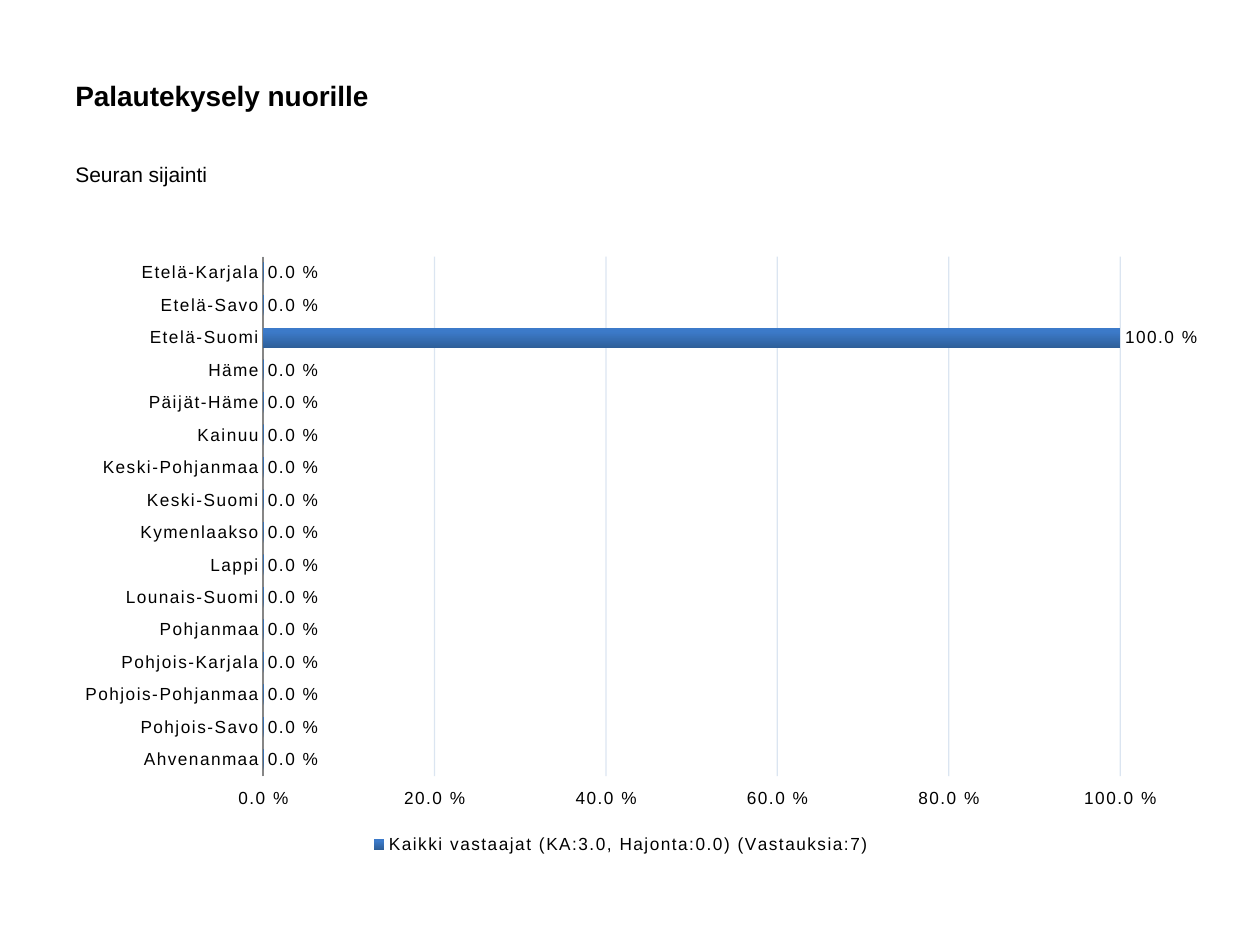
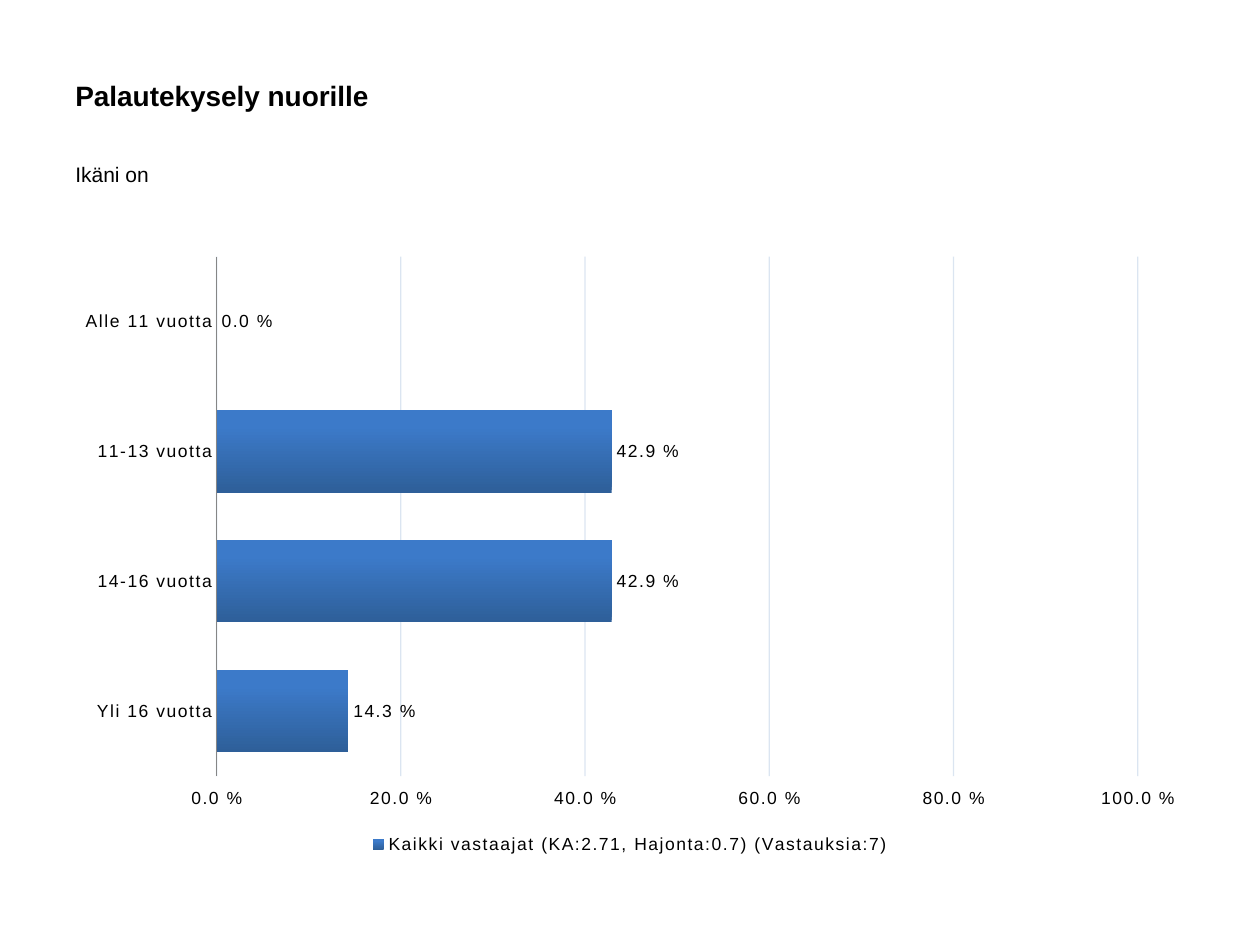
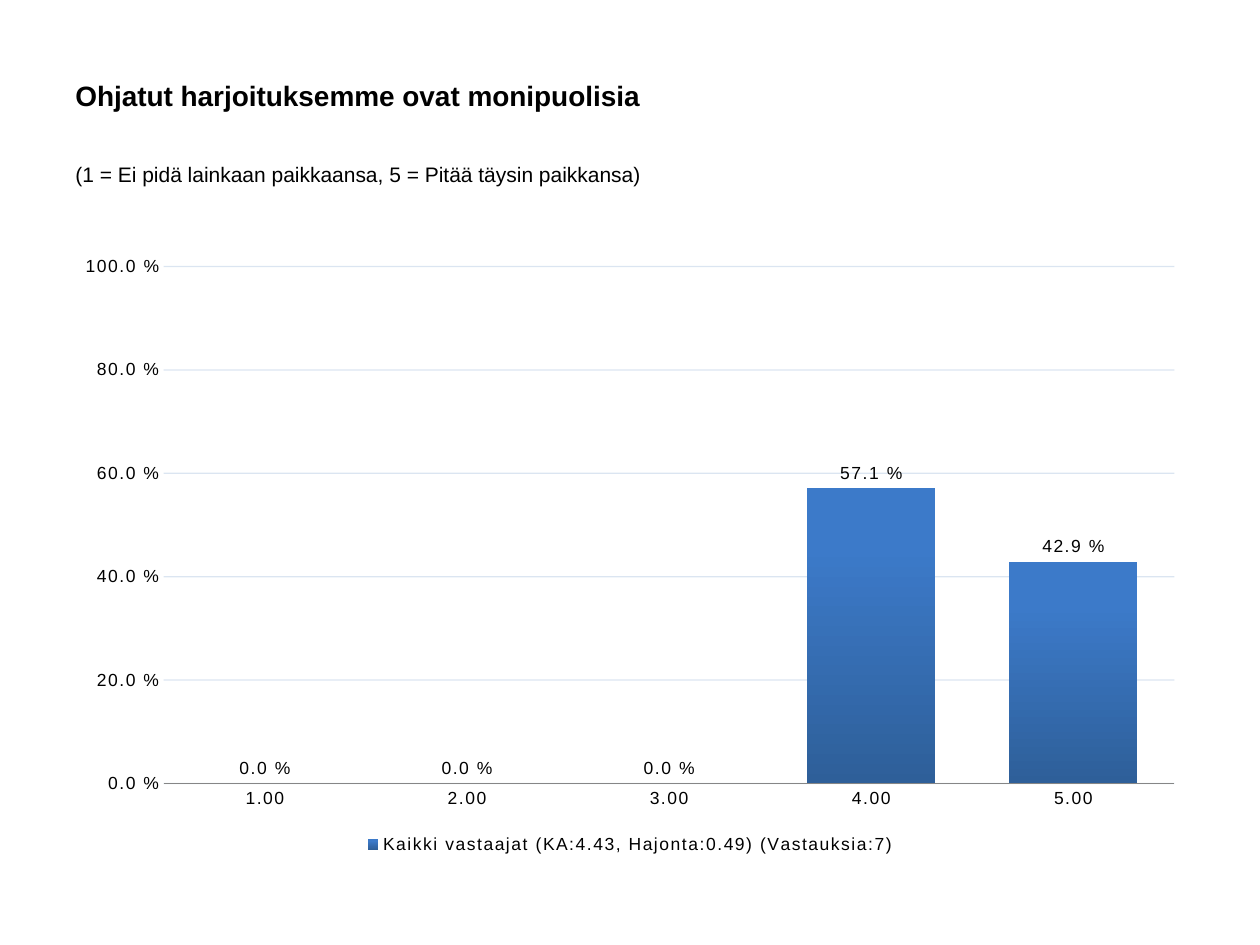
from pptx import Presentation
from pptx.chart.data import CategoryChartData
from pptx.dml.color import RGBColor
from pptx.enum.chart import (XL_CHART_TYPE, XL_LABEL_POSITION, XL_LEGEND_POSITION,
                             XL_TICK_LABEL_POSITION, XL_TICK_MARK)
from pptx.enum.text import MSO_ANCHOR
from pptx.oxml.ns import qn
from pptx.util import Inches, Pt
from lxml import etree

BAR = XL_CHART_TYPE.BAR_CLUSTERED
COLUMN = XL_CHART_TYPE.COLUMN_CLUSTERED
NO_TICK = XL_TICK_MARK.NONE
FAR_SIDE = XL_TICK_LABEL_POSITION.HIGH
OUTSIDE_END = XL_LABEL_POSITION.OUTSIDE_END
BOTTOM = XL_LEGEND_POSITION.BOTTOM
TOP_ANCHOR, MIDDLE_ANCHOR = MSO_ANCHOR.TOP, MSO_ANCHOR.MIDDLE

# Content
SURVEY = "Palautekysely nuorille"
REGIONS = [
    "Etelä-Karjala", "Etelä-Savo", "Etelä-Suomi", "Häme", "Päijät-Häme", "Kainuu",
    "Keski-Pohjanmaa", "Keski-Suomi", "Kymenlaakso", "Lappi", "Lounais-Suomi",
    "Pohjanmaa", "Pohjois-Karjala", "Pohjois-Pohjanmaa", "Pohjois-Savo", "Ahvenanmaa",
]
QUESTIONS = [
    {"title": SURVEY, "subtitle": "Seuran sijainti", "type": BAR,
     "series": "Kaikki vastaajat (KA:3.0, Hajonta:0.0) (Vastauksia:7)",
     "answers": {region: int(region == "Etelä-Suomi") for region in REGIONS}},
    {"title": SURVEY, "subtitle": "Ikäni on", "type": BAR,
     "series": "Kaikki vastaajat (KA:2.71, Hajonta:0.7) (Vastauksia:7)",
     "answers": {"Alle 11 vuotta": 0, "11-13 vuotta": 0.429,
                 "14-16 vuotta": 0.429, "Yli 16 vuotta": 0.143}},
    {"title": "Ohjatut harjoituksemme ovat monipuolisia",
     "subtitle": "(1 = Ei pidä lainkaan paikkaansa, 5 = Pitää täysin paikkansa)",
     "type": COLUMN,
     "series": "Kaikki vastaajat (KA:4.43, Hajonta:0.49) (Vastauksia:7)",
     "answers": {"1.00": 0, "2.00": 0, "3.00": 0, "4.00": 0.571, "5.00": 0.429}},
]

# Shared style
COLORS = {"text": "000000", "grid": "4F81BD", "axis": "868686",
          "bar_dark": "2E5F99", "bar_light": "3C7AC9"}
FONT = "Arial"
PERCENT = "0.0\\ %"
LETTER_SPACING = 100  # hundredths of a point
WIDTH, HEIGHT = 10, 7.5
MARGIN = WIDTH / 20
BANDS = {"title": (0.36, 0.79), "subtitle": (1.23, 0.59), "chart": (1.94, 4.88)}


def color(name):
    return RGBColor.from_string(COLORS[name])


def place(band):
    top, height = BANDS[band]
    return [Inches(length) for length in (MARGIN, top, WIDTH - 2 * MARGIN, height)]


def style_font(font, size, bold=False):
    font.name, font.size, font.bold = FONT, Pt(size), bold
    font.color.rgb = color("text")


def add_text(slide, band, text, size, bold=False, anchor=TOP_ANCHOR, space_before=0):
    frame = slide.shapes.add_textbox(*place(band)).text_frame
    frame.word_wrap = True
    frame.vertical_anchor = anchor
    paragraph = frame.paragraphs[0]
    paragraph.space_before = Pt(space_before)
    run = paragraph.add_run()
    run.text = text
    style_font(run.font, size, bold)


def style_axes(chart, horizontal):
    categories, values = chart.category_axis, chart.value_axis
    for axis in (categories, values):
        axis.major_tick_mark = axis.minor_tick_mark = NO_TICK
        style_font(axis.tick_labels.font, 10)
    categories.has_major_gridlines = False
    categories.format.line.color.rgb = color("axis")
    categories.format.line.width = Pt(0.75)
    if horizontal:  # first answer on top, percentages at the bottom
        categories.reverse_order = True
        values.tick_label_position = FAR_SIDE
    values.minimum_scale, values.maximum_scale, values.major_unit = 0, 1, 0.2
    values.tick_labels.number_format = PERCENT
    values.tick_labels.number_format_is_linked = False
    values.format.line.fill.background()
    # Pale gridlines
    values.has_major_gridlines = True
    grid = values.major_gridlines.format.line
    grid.width = Pt(0.75)
    grid.color.rgb = color("grid")
    for tint in values.major_gridlines._xAx.iter(qn("a:srgbClr")):
        if tint.get("val") == COLORS["grid"]:
            etree.SubElement(tint, qn("a:alpha")).set("val", "20000")


def style_bars(plot):
    plot.gap_width = 58
    plot.vary_by_categories = False
    bars = plot.series[0].format
    bars.line.fill.background()
    bars.fill.gradient()
    bars.fill.gradient_angle = 90
    shades = (("bar_dark", 0), ("bar_light", 0.8))
    for stop, (name, position) in zip(bars.fill.gradient_stops, shades):
        stop.color.rgb = color(name)
        stop.position = position
    plot.has_data_labels = True
    labels = plot.data_labels
    labels.show_value = True
    labels.position = OUTSIDE_END
    labels.number_format = PERCENT
    labels.number_format_is_linked = False
    style_font(labels.font, 10)


def add_answer_chart(slide, question):
    data = CategoryChartData(number_format=PERCENT)
    data.categories = list(question["answers"])
    data.add_series(question["series"], list(question["answers"].values()))
    chart = slide.shapes.add_chart(question["type"], *place("chart"), data).chart
    chart.has_title = False
    style_font(chart.font, 10)
    style_axes(chart, question["type"] == BAR)
    style_bars(chart.plots[0])
    chart.has_legend = True
    chart.legend.position = BOTTOM
    chart.legend.include_in_layout = False
    style_font(chart.legend.font, 10)
    for properties in chart._chartSpace.iter(qn("a:defRPr")):
        properties.set("spc", str(LETTER_SPACING))


def main():
    presentation = Presentation()
    presentation.slide_width, presentation.slide_height = Inches(WIDTH), Inches(HEIGHT)
    for question in QUESTIONS:
        slide = presentation.slides.add_slide(presentation.slide_layouts[6])
        add_text(slide, "title", question["title"], 16, bold=True, anchor=MIDDLE_ANCHOR)
        add_text(slide, "subtitle", question["subtitle"], 12, space_before=2.4)
        add_answer_chart(slide, question)
    presentation.save("out.pptx")


if __name__ == "__main__":
    main()
